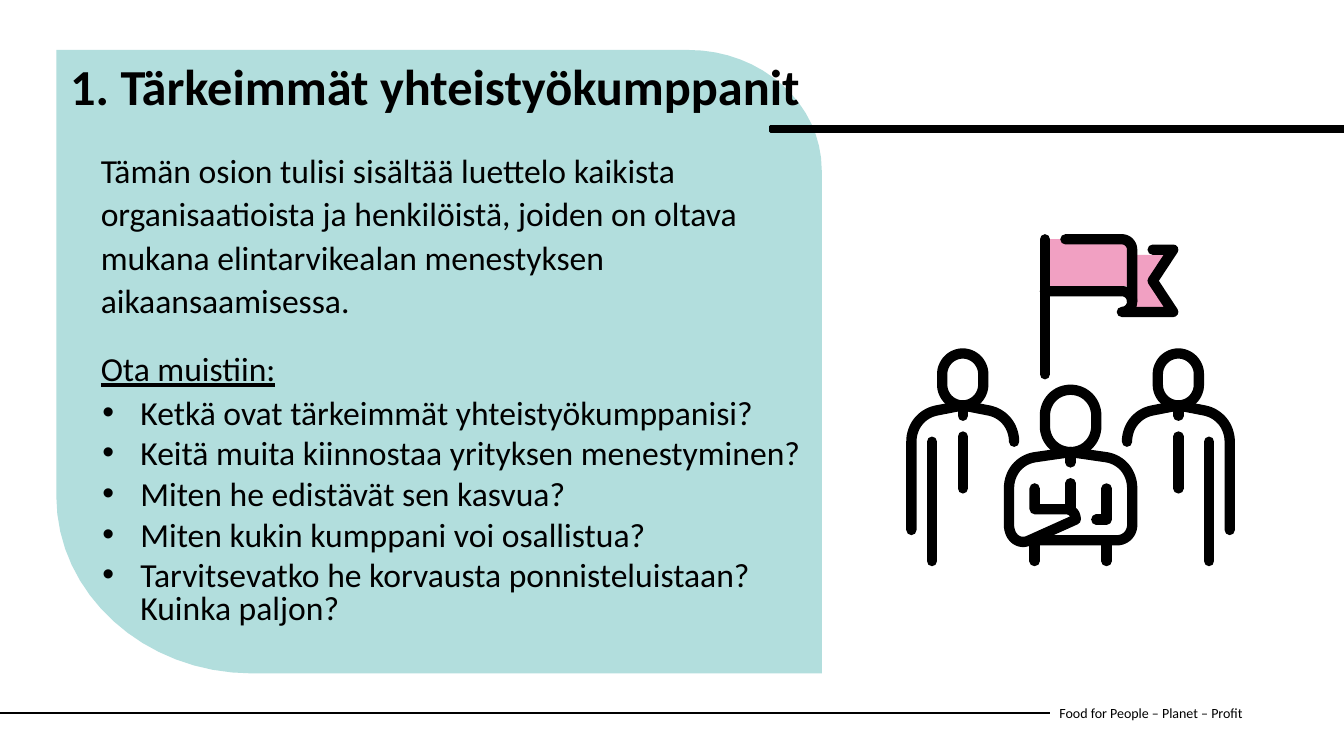
from lxml import etree
from pptx import Presentation
from pptx.dml.color import RGBColor
from pptx.enum.shapes import MSO_CONNECTOR, MSO_SHAPE
from pptx.enum.text import MSO_ANCHOR
from pptx.oxml.ns import qn
from pptx.util import Cm, Pt

STRAIGHT = MSO_CONNECTOR.STRAIGHT
RECT = MSO_SHAPE.RECTANGLE
TOP, MIDDLE = MSO_ANCHOR.TOP, MSO_ANCHOR.MIDDLE

THEME = {
    "font": "Calibri",
    "ink": RGBColor(0, 0, 0),
    "panel": RGBColor(0xB2, 0xDE, 0xDD),
    "flag": RGBColor(0xF1, 0xA0, 0xC2),
    "title": Pt(36), "body": Pt(24), "foot": Pt(10),
}

deck = Presentation()
deck.slide_width, deck.slide_height = Cm(33.87), Cm(19.05)
slide = deck.slides.add_slide(deck.slide_layouts[6])
shapes = slide.shapes


def trace(parts, left=0, top=0, wide=1, high=1, closed=False):
    """Draw outlines as one shape; a dot of six numbers is a cubic curve to its last pair."""
    pen = None
    for dots in parts:
        flat = [dots[0]]
        for dot in dots[1:]:
            if len(dot) == 2:
                flat.append(dot)
                continue
            (ax, ay), (bx, by, cx, cy, dx, dy) = flat[-1], dot
            for step in range(1, 17):
                t = step / 16
                u = 1 - t
                flat.append(tuple(
                    u**3 * a + 3 * u * u * t * b + 3 * u * t * t * c + t**3 * d
                    for a, b, c, d in ((ax, bx, cx, dx), (ay, by, cy, dy))))
        spots = [(Cm(left + x * wide), Cm(top + y * high)) for x, y in flat]
        if pen is None:
            pen = shapes.build_freeform(*spots[0])
        else:
            pen.move_to(*spots[0])
        pen.add_line_segments(spots[1:], close=closed or dots[0] == dots[-1][-2:])
    return pen.convert_to_shape()


def paint(shape, fill=None, width=None):
    """Set the fill and a round-ended line; None leaves either one out."""
    shape.shadow.inherit = False
    if fill is None:
        shape.fill.background()
    else:
        shape.fill.solid()
        shape.fill.fore_color.rgb = fill
    if width is None:
        shape.line.fill.background()
    else:
        shape.line.color.rgb = THEME["ink"]
        shape.line.width = width


# Footer rule, panel and heading bar
rule = shapes.add_connector(STRAIGHT, 0, Cm(17.96), Cm(26.45), Cm(17.96))
rule.line.color.rgb = THEME["ink"]
rule.line.width = Pt(1.5)
etree.SubElement(rule._element.spPr, qn("a:effectLst"))

panel = [(20.71, 16.97), (6.35, 16.97), (3.63, 16.97, 1.42, 14.96, 1.42, 12.5),
         (1.42, 1.26), (17.35, 1.26), (19.2, 1.26, 20.71, 2.62, 20.71, 4.29)]
paint(trace([panel], closed=True), THEME["panel"])
bar = shapes.add_shape(RECT, Cm(19.41), Cm(3.18), Cm(14.46), Cm(0.13))
paint(bar, THEME["ink"], Pt(1.93))

# Texts
plain = {"line_spacing": 1.07, "space_before": Pt(10), "space_after": Pt(8)}
item = {"line_spacing": 0.8, "space_before": Pt(0), "space_after": Pt(6)}
head = {"line_spacing": 0.9, "space_before": Pt(10)}
body = [
    ("Tämän osion tulisi sisältää luettelo kaikista organisaatioista ja henkilöistä, "
     "joiden on oltava mukana elintarvikealan menestyksen aikaansaamisessa.", plain, {}),
    ("Ota muistiin:", plain, {"underline": True}),
]
body += [(text, item, {}) for text in (
    "Ketkä ovat tärkeimmät yhteistyökumppanisi?",
    "Keitä muita kiinnostaa yrityksen menestyminen?",
    "Miten he edistävät sen kasvua?",
    "Miten kukin kumppani voi osallistua?",
    "Tarvitsevatko he korvausta ponnisteluistaan? Kuinka paljon?",
)]
boxes = [
    ((26.45, 17.45, 6.93, 1.02), "foot", MIDDLE,
     [("Food for People – Planet – Profit", {}, {})]),
    ((2.29, 3.59, 18.21, 11), "body", TOP, body),
    ((1.52, 1.45, 22.43, 2.77), "title", TOP,
     [("1. Tärkeimmät yhteistyökumppanit", head, {"bold": True})]),
]
for place, size, anchor, lines in boxes:
    frame = shapes.add_textbox(*map(Cm, place)).text_frame
    frame.word_wrap = True
    frame.vertical_anchor = anchor
    frame.margin_right = 0
    for row, (text, layout, style) in enumerate(lines):
        para = frame.add_paragraph() if row else frame.paragraphs[0]
        for name, value in layout.items():
            setattr(para, name, value)
        if layout is item:
            props = para._p.get_or_add_pPr()
            props.set("marL", str(Cm(1)))
            props.set("indent", str(-Cm(0.96)))
            etree.SubElement(props, qn("a:buFont")).set("typeface", "Arial")
            etree.SubElement(props, qn("a:buChar")).set("char", "•")
        run = para.add_run()
        run.text = text
        run.font.color.rgb = THEME["ink"]
        look = {"name": THEME["font"], "size": THEME[size], **style}
        for name, value in look.items():
            setattr(run.font, name, value)

# Team icon on a grid of 64 by 64 units
grid = (22.84, 5.9, 8.28 / 64, 8.37 / 64)
stroke = Cm(0.26)

ribbon = [(44, 4), (51.5, 4), (48, 9), (52, 14.5), (44, 14.5)]
cloth = [(28, 1), (43, 1), (43, 10), (28, 10)]
for area in (ribbon, cloth):
    paint(trace([area], *grid, closed=True), THEME["flag"])

person = [
    [(1, 57), (1, 40), (1, 37, 3, 34.6, 5.8, 34), (11, 33),
     (16.2, 34), (19, 34.6, 21, 37, 21, 40)],  # shoulders
    [(11, 33), (11, 35)],  # neck
    [(7, 27), (7, 24.8, 8.8, 23, 11, 23), (13.2, 23, 15, 24.8, 15, 27), (15, 29),
     (15, 31.2, 13.2, 33, 11, 33), (8.8, 33, 7, 31.2, 7, 29), (7, 27)],  # head
]
side = [person, [[(5, 40), (5, 63)]], [[(11, 39), (11, 49)]]]  # with arm and tie
twin = [[[tuple(v if k % 2 else 64 - v for k, v in enumerate(dot)) for dot in part]
         for part in piece] for piece in side]
banner = [
    [(27, 1), (27, 27)],  # pole
    [(31, 1), (42, 1), (43.1, 1, 44, 1.9, 44, 3), (44, 13),
     (44, 14.1, 43.1, 15, 42, 15), (52, 15), (48, 9), (52, 3), (48, 3)],
    [(27, 11), (42, 11), (43.1, 11, 44, 11.9, 44, 13)],  # hem
]
leader = [
    [(32, 42), (25, 43), (22, 43.5, 20, 46, 20, 49), (20, 56),
     (20, 58.5, 22, 60, 24, 59), (33, 55), (33, 54, 32.4, 53, 31, 53),
     (25, 53), (25, 49)],  # folded arm
    [(32, 42), (39, 43), (42, 43.5, 44, 46, 44, 49), (44, 56),
     (44, 57.7, 42.7, 59, 41, 59), (24, 59)],  # trunk
    [(27, 35), (27, 32.2, 29.2, 30, 32, 30), (34.8, 30, 37, 32.2, 37, 35), (37, 37),
     (37, 39.8, 34.8, 42, 32, 42), (29.2, 42, 27, 39.8, 27, 37), (27, 35)],  # head
    [(32, 42), (32, 44)],
    [(32, 48), (32, 53)],
    [(25, 59), (25, 63)],
    [(39, 59), (39, 63)],
]
hand = [[(39, 49), (39, 55), (37, 55)]]
for piece in [hand, leader, banner, *side, *twin]:
    shape = trace(piece, *grid)
    paint(shape, width=stroke)
    line = shape.line._get_or_add_ln()
    line.set("cap", "rnd")
    etree.SubElement(line, qn("a:round"))

deck.save("out.pptx")
